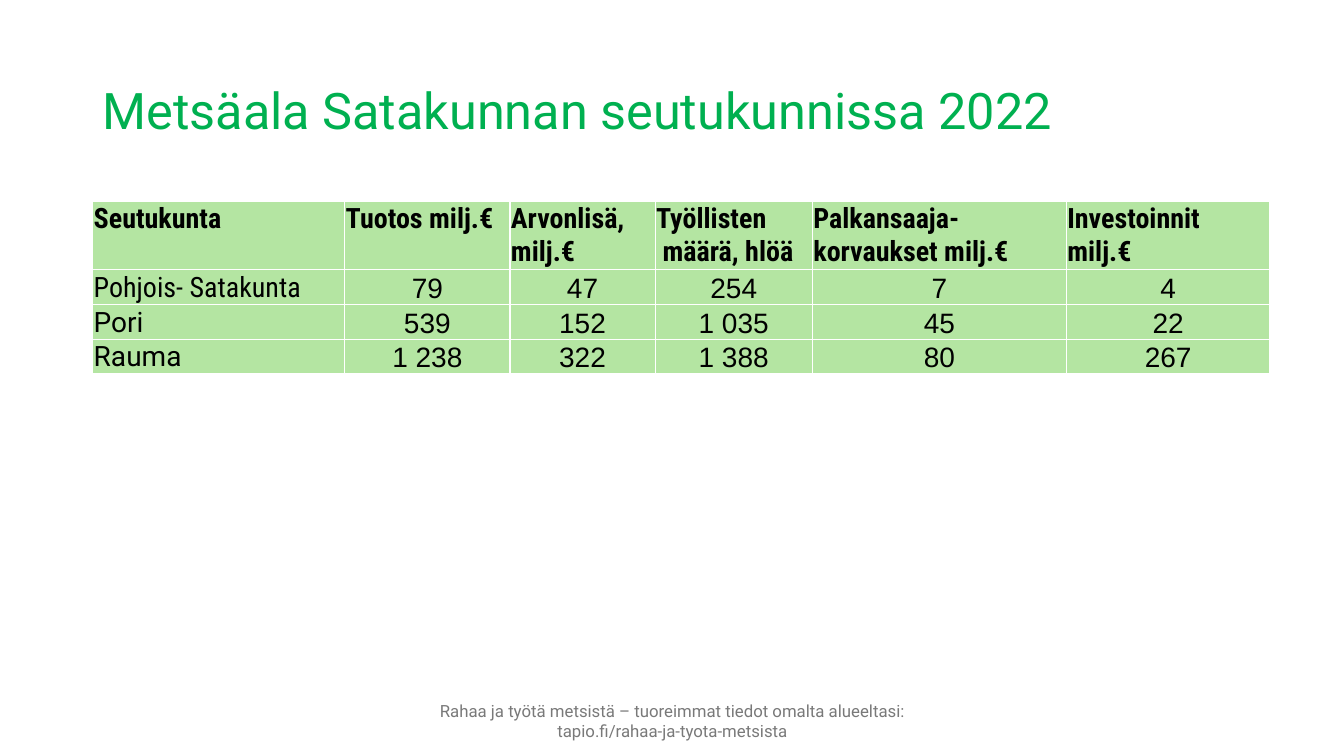
from dataclasses import dataclass

from lxml import etree
from pptx import Presentation
from pptx.dml.color import RGBColor
from pptx.enum.text import MSO_ANCHOR, PP_ALIGN
from pptx.oxml.ns import qn
from pptx.util import Inches, Pt

LEFT, MID = PP_ALIGN.LEFT, PP_ALIGN.CENTER
TOP, CENTER, BASE = MSO_ANCHOR.TOP, MSO_ANCHOR.MIDDLE, MSO_ANCHOR.BOTTOM
WIDE, HIGH = Inches(13.33), Inches(7.5)


@dataclass(frozen=True)
class Theme:
    green: str = "00B050"
    pale: str = "B4E5A2"
    gray: str = "797979"
    black: str = "000000"
    rule: str = "FFFFFF"
    head: int = 36
    body: int = 20
    foot: int = 12
    sans: str = "Roboto"
    slim: str = "Roboto Condensed"
    plain: str = "Arial"


THEME = Theme()

# Column widths and row heights in percent of the slide
COLS = [18.75, 12.3, 10.8, 11.7, 18.9, 15.15]
ROWS = [8.67, 4.4, 4.4, 4.4]
HEADS = [
    ["Seutukunta"],
    ["Tuotos milj.€"],
    ["Arvonlisä, milj.€"],
    ["Työllisten", " määrä, hlöä"],
    ["Palkansaaja-korvaukset milj.€"],
    ["Investoinnit", "milj.€"],
]
AREAS = [
    ("Pohjois- Satakunta", THEME.slim, ["79", "47", "254", "7", "4"]),
    ("Pori", THEME.sans, ["539", "152", "1 035", "45", "22"]),
    ("Rauma", THEME.sans, ["1 238", "322", "1 388", "80", "267"]),
]


def across(share):
    return round(WIDE * share / 100)


def down(share):
    return round(HIGH * share / 100)


def write(frame, lines, font, size, color, align=LEFT, bold=False):
    for i, line in enumerate(lines):
        para = frame.add_paragraph() if i else frame.paragraphs[0]
        para.alignment = align
        run = para.add_run()
        run.text = line
        run.font.name = font
        run.font.size = Pt(size)
        run.font.bold = bold
        run.font.color.rgb = RGBColor.from_string(color)


def add_text(slide, area, line, size, color, align=LEFT, space=1.0):
    x, y, w, h = area
    box = slide.shapes.add_textbox(across(x), down(y), across(w), down(h))
    frame = box.text_frame
    frame.word_wrap = True
    frame.vertical_anchor = CENTER
    write(frame, [line], THEME.sans, size, color, align)
    frame.paragraphs[0].line_spacing = space


def add_rules(cell):
    props = cell._tc.get_or_add_tcPr()
    for side in ("lnL", "lnR", "lnT", "lnB"):
        line = etree.SubElement(props, qn(f"a:{side}"), w=str(Pt(1)))
        fill = etree.SubElement(line, qn("a:solidFill"))
        etree.SubElement(fill, qn("a:srgbClr"), val=THEME.rule)


def fill_cell(cell, lines, font, anchor=BASE, align=LEFT, bold=False):
    add_rules(cell)
    cell.fill.solid()
    cell.fill.fore_color.rgb = RGBColor.from_string(THEME.pale)
    pad = Inches(0.01 if align == LEFT else 0)
    cell.margin_left = cell.margin_right = cell.margin_top = pad
    cell.margin_bottom = 0
    cell.vertical_anchor = anchor
    write(cell.text_frame, lines, font, THEME.body, THEME.black, align, bold)


def add_grid(slide, x, y):
    table = slide.shapes.add_table(
        len(ROWS), len(COLS), across(x), down(y),
        across(sum(COLS)), down(sum(ROWS))).table
    for col, share in zip(table.columns, COLS):
        col.width = across(share)
    for row, share in zip(table.rows, ROWS):
        row.height = down(share)
    # Header row
    for c, lines in enumerate(HEADS):
        fill_cell(table.cell(0, c), lines, THEME.slim, TOP, bold=True)
    # One row for each area
    for r, (name, font, values) in enumerate(AREAS, 1):
        fill_cell(table.cell(r, 0), [name], font)
        for c, value in enumerate(values, 1):
            fill_cell(table.cell(r, c), [value], THEME.plain, align=MID)


def main():
    deck = Presentation()
    deck.slide_width, deck.slide_height = WIDE, HIGH
    slide = deck.slides.add_slide(deck.slide_layouts[6])
    # Title
    add_text(slide, (6.9, 5.33, 86.27, 19.33),
             "Metsäala Satakunnan seutukunnissa 2022",
             THEME.head, THEME.green, space=0.9)
    # Figures by area
    add_grid(slide, 6.9, 26.67)
    # Footer
    add_text(slide, (31.96, 92.67, 36.16, 5.33),
             "Rahaa ja työtä metsistä – tuoreimmat tiedot omalta alueeltasi: "
             "tapio.fi/rahaa-ja-tyota-metsista",
             THEME.foot, THEME.gray, MID)
    deck.save("out.pptx")


if __name__ == "__main__":
    main()
